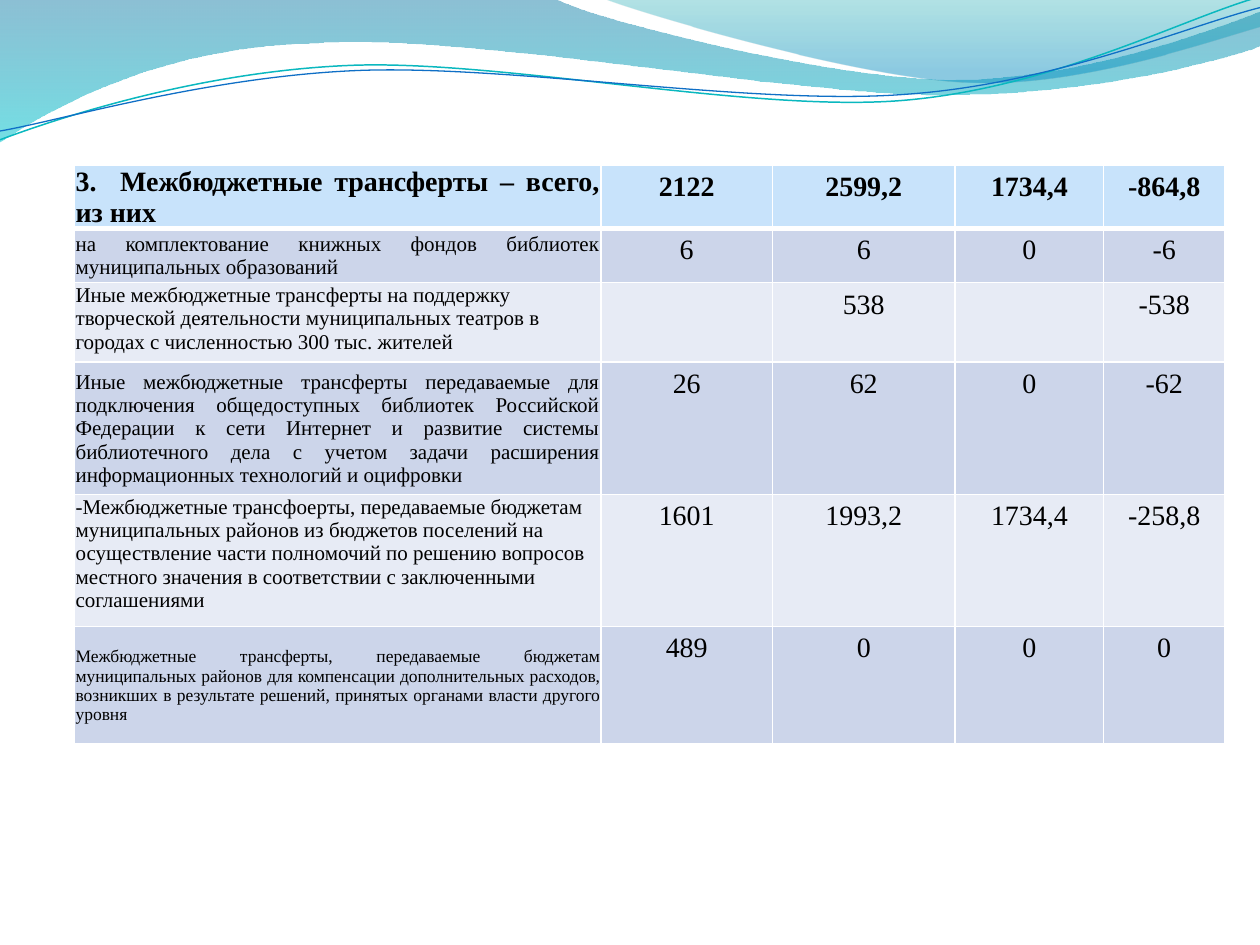
from math import cos, radians, sin

from lxml.etree import SubElement
from pptx import Presentation
from pptx.dml.color import RGBColor
from pptx.enum.text import MSO_ANCHOR as Anchor, PP_ALIGN as Align
from pptx.oxml.ns import qn
from pptx.util import Inches, Pt

FONT = "Times New Roman"
COLS = [4.18, 1.36, 1.45, 1.18, 0.96]
HEADER, DARK, LIGHT = "C8E3FB", "CCD5EA", "E7EBF5"
ROWS = [
    (0.41, 16, True, ["3.  Межбюджетные трансферты – всего, из них",
                      "2122", "2599,2", "1734,4", "-864,8"]),
    (0.43, 12, True, ["на комплектование книжных фондов библиотек муниципальных образований",
                      "6", "6", "0", "-6"]),
    (0.63, 12, False, ["Иные межбюджетные трансферты на поддержку творческой деятельности "
                       "муниципальных театров в городах с численностью 300 тыс. жителей",
                       "", "538", "", "-538"]),
    (1.05, 12, True, ["Иные межбюджетные трансферты передаваемые для подключения общедоступных "
                      "библиотек Российской Федерации к сети Интернет и развитие системы "
                      "библиотечного дела с учетом задачи расширения информационных технологий "
                      "и оцифровки",
                      "26", "62", "0", "-62"]),
    (1.05, 12, False, ["-Межбюджетные трансфоерты, передаваемые бюджетам муниципальных районов "
                       "из бюджетов поселений на осуществление части полномочий по решению "
                       "вопросов местного значения в соответствии с заключенными соглашениями",
                       "1601", "1993,2", "1734,4", "-258,8"]),
    (0.93, 10, True, ["Межбюджетные трансферты, передаваемые бюджетам муниципальных районов для "
                      "компенсации дополнительных расходов, возникших в результате решений, "
                      "принятых органами власти другого уровня",
                      "489", "0", "0", "0"]),
]

WIDE_WAVE = [
    (0, 0), (4.4, -0.01),
    (4.76, 0.17, 6.64, 0.63, 7.58, 0.63), (8.53, 0.63, 9.58, 0.26, 10, 0.09),
    (10.01, 0.36),
    (9.83, 0.44, 8.7, 0.76, 7.46, 0.75), (6.22, 0.75, 3.82, 0.28, 2.57, 0.34),
    (1.29, 0.36, 0.46, 0.83, -0.01, 1.13),
]
RIGHT_WAVE = [
    (4.79, -0.01),
    (5.09, 0.11, 6.82, 0.62, 7.69, 0.65), (8.56, 0.69, 9.61, 0.32, 10, 0.21),
    (10, 0),
]
TEAL_LINE = [
    (0, 1.11),
    (0.48, 0.93, 1.58, 0.57, 2.77, 0.52), (3.95, 0.47, 5.93, 0.89, 7.13, 0.8),
    (8.33, 0.71, 9.38, 0.15, 9.98, -0.02),
]
BLUE_LINE = [
    (0, 1.04),
    (0.47, 0.96, 1.64, 0.61, 2.83, 0.56), (4.03, 0.51, 5.97, 0.84, 7.17, 0.75),
    (8.36, 0.67, 9.41, 0.21, 10, 0.06),
]
LINE_TILT = 357.3


def rgb(color):
    return RGBColor.from_string(color)


def unrotate(x, y, box, angle):
    left, top, width, height = box
    cx, cy = left + width / 2, top + height / 2
    c, s = cos(radians(-angle)), sin(radians(-angle))
    return cx + (x - cx) * c - (y - cy) * s, cy + (x - cx) * s + (y - cy) * c


def add_outline(slide, steps, box, close, angle=0):
    steps = [[unrotate(*step[i:i + 2], box, angle) for i in range(0, len(step), 2)]
             for step in steps]
    start, *ends = [tuple(Inches(v) for v in step[-1]) for step in steps]
    builder = slide.shapes.build_freeform(*start)
    builder.add_line_segments(ends, close=close)
    sp = builder.convert_to_shape()
    sp.left, sp.top, sp.width, sp.height = map(Inches, box)
    sp.rotation = angle
    sp.shadow.inherit = False
    outline = next(sp._element.iter(qn("a:path")))
    outline.set("w", str(sp.width))
    outline.set("h", str(sp.height))
    for segment, points in zip(list(outline), steps):
        if len(points) == 3:
            curve = outline.makeelement(qn("a:cubicBezTo"))
            outline.replace(segment, curve)
            segment = curve
        for pt in list(segment):
            segment.remove(pt)
        for x, y in points:
            SubElement(segment, qn("a:pt"), x=str(Inches(x) - sp.left),
                       y=str(Inches(y) - sp.top))
    return sp


def add_wave(slide, steps, box, stops):
    sp = add_outline(slide, steps, box, True)
    sp.line.fill.background()
    sp.fill.gradient()
    sp.fill.gradient_angle = 270
    for stop, (position, color, _) in zip(sp.fill.gradient_stops, stops):
        stop.position = position
        stop.color.rgb = rgb(color)
    for clr, (_, _, alpha) in zip(sp._element.spPr.iter(qn("a:srgbClr")), stops):
        SubElement(clr, qn("a:alpha"), val=str(alpha * 1000))


def add_curve(slide, steps, box, color, width):
    sp = add_outline(slide, steps, box, False, LINE_TILT)
    sp.fill.background()
    sp.line.color.rgb = rgb(color)
    sp.line.width = Pt(width)


def set_borders(cell, top, bottom):
    tcPr = cell._tc.get_or_add_tcPr()
    for side, width in (("L", 1), ("R", 1), ("T", top), ("B", bottom)):
        ln = SubElement(tcPr, qn("a:ln" + side), w=str(Pt(width)))
        SubElement(SubElement(ln, qn("a:solidFill")), qn("a:srgbClr"), val="FFFFFF")


def fill_cell(cell, text, color, size, bold, align):
    cell.fill.solid()
    cell.fill.fore_color.rgb = rgb(color)
    if not text:
        return
    cell.text_frame.text = text
    p = cell.text_frame.paragraphs[0]
    p.alignment = align
    for r in p.runs:
        r.font.name = FONT
        r.font.size = Pt(size)
        r.font.bold = bold
        r.font.color.rgb = rgb("000000")


def add_budget_table(slide):
    frame = slide.shapes.add_table(len(ROWS), len(COLS), Inches(0.59), Inches(1.31),
                                   Inches(sum(COLS)), Inches(sum(row[0] for row in ROWS)))
    table = frame.table
    table.horz_banding = False
    for column, width in zip(table.columns, COLS):
        column.width = Inches(width)
    for i, (height, size, justified, texts) in enumerate(ROWS):
        table.rows[i].height = Inches(height)
        color = HEADER if i == 0 else DARK if i % 2 else LIGHT
        for j, text in enumerate(texts):
            cell = table.cell(i, j)
            set_borders(cell, 3 if i == 1 else 1, 3 if i == 0 else 1)
            if j:
                fill_cell(cell, text, color, 16, i == 0, Align.CENTER)
                continue
            fill_cell(cell, text, color, size, i == 0,
                      Align.JUSTIFY if justified else Align.LEFT)
            cell.vertical_anchor = Anchor.MIDDLE if justified else Anchor.TOP
            cell.margin_left = cell.margin_right = cell.margin_top = Inches(0.01)
            cell.margin_bottom = 0


def main():
    prs = Presentation()
    prs.slide_width, prs.slide_height = Inches(10), Inches(7.5)
    slide = prs.slides.add_slide(prs.slide_layouts[6])
    add_wave(slide, WIDE_WAVE, (-0.01, -0.01, 10.02, 1.14),
             [(0, "0074A1", 45), (1, "00C6CF", 55)])
    add_wave(slide, RIGHT_WAVE, (4.79, -0.01, 5.21, 0.7),
             [(0, "00A1A9", 30), (0.8, "008BBF", 45)])
    add_curve(slide, TEAL_LINE, (-0.02, 0.22, 10.02, 0.71), "0AB8BF", 0.85)
    add_curve(slide, BLUE_LINE, (-0.02, 0.3, 10.03, 0.58), "0F6FC6", 0.75)
    add_budget_table(slide)
    prs.save("out.pptx")


if __name__ == "__main__":
    main()
